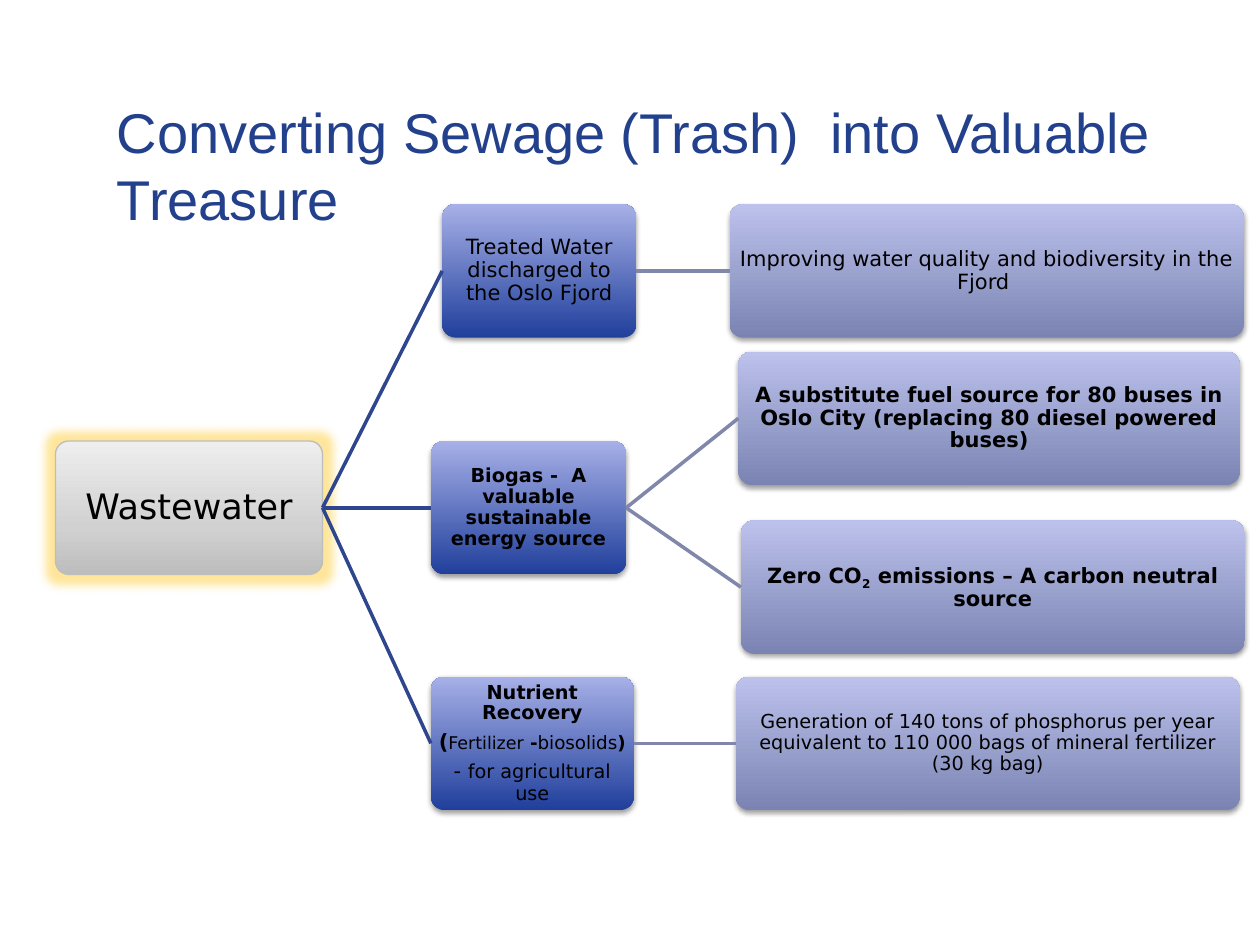
import pptx
import pptx.dml.color
import pptx.enum.shapes
import pptx.enum.text
import pptx.oxml
import pptx.oxml.ns
import pptx.util

ALIGN = pptx.enum.text.PP_ALIGN
ANCHOR = pptx.enum.text.MSO_ANCHOR
SOURCE = [(0, "BDBDBD"), (35, "D1D1D1"), (100, "EEEEEE")]
PRODUCT = [(0, "203F9C"), (100, "A7B0E7")]
BENEFIT = [(0, "7A83B2"), (100, "BCC2EC")]
SHADOW = ('<a:outerShdw blurRad="39370" dist="20320" dir="5400000" rotWithShape="0">'
          '<a:srgbClr val="000000"><a:alpha val="38000"/></a:srgbClr></a:outerShdw>')
GLOW = '<a:glow rad="139700"><a:srgbClr val="FFC000"><a:alpha val="40000"/></a:srgbClr></a:glow>'


def color(value):
    return pptx.dml.color.RGBColor.from_string(value)


def xml(tag, body="", attrs=""):
    ns = pptx.oxml.ns.nsdecls("a")
    return pptx.oxml.parse_xml(f"<a:{tag} {ns} {attrs}>{body}</a:{tag}>")


class Deck:
    columns, rows = 100, 75
    title_font, body_font = "Arial", "DejaVu Sans"
    box_height = 10.6

    def __init__(self):
        self.prs = pptx.Presentation()
        self.prs.slide_width = pptx.util.Inches(10)
        self.prs.slide_height = pptx.util.Inches(7.5)
        self.slide = self.prs.slides.add_slide(self.prs.slide_layouts[6])

    def place(self, x, y, w, h):
        col = self.prs.slide_width / self.columns
        row = self.prs.slide_height / self.rows
        return [round(v) for v in (x * col, y * row, w * col, h * row)]

    def style(self, r, font, size, fill, bold=False, baseline=0):
        r.font.name, r.font.size, r.font.bold = font, pptx.util.Pt(size), bold
        r.font.color.rgb = color(fill)
        if baseline:
            r._r.get_or_add_rPr().set("baseline", str(baseline * 1000))

    def title(self, text, x, y, w, h):
        tf = self.slide.shapes.add_textbox(*self.place(x, y, w, h)).text_frame
        tf.word_wrap = True
        tf.vertical_anchor = ANCHOR.MIDDLE
        tf.text = text
        self.style(tf.paragraphs[0].runs[0], self.title_font, 32, "22408C")

    def box(self, x, y, w, stops, paragraphs, effect=SHADOW, line=None):
        s = self.slide.shapes.add_shape(pptx.enum.shapes.MSO_SHAPE.ROUNDED_RECTANGLE,
                                        *self.place(x, y, w, self.box_height))
        s.adjustments[0] = 0.1
        s.fill.gradient()
        s.fill.gradient_angle = 90
        spPr = s._element.spPr
        gs_list = spPr.find(".//" + pptx.oxml.ns.qn("a:gsLst"))
        gs_list[:] = [xml("gs", f'<a:srgbClr val="{value}"/>', f'pos="{pos * 1000}"')
                      for pos, value in stops]
        if line:
            s.line.color.rgb = color(line)
            s.line.width = pptx.util.Pt(0.75)
        else:
            s.line.fill.background()
        spPr.append(xml("effectLst", effect))
        tf = s.text_frame
        tf.word_wrap = True
        tf.vertical_anchor = ANCHOR.MIDDLE
        tf.margin_left = tf.margin_right = pptx.util.Inches(0.01)
        tf.margin_top = tf.margin_bottom = pptx.util.Inches(0.01)
        for i, runs in enumerate(paragraphs):
            p = tf.add_paragraph() if i else tf.paragraphs[0]
            p.alignment = ALIGN.CENTER
            p.line_spacing = 0.9
            p.space_after = pptx.util.Pt(4)
            for text, *look in runs:
                r = p.add_run()
                r.text = text
                self.style(r, self.body_font, look[0], "000000", *look[1:])
        return s

    def link(self, parent, child, value):
        s = self.slide.shapes.add_connector(pptx.enum.shapes.MSO_CONNECTOR.STRAIGHT, 0, 0, 0, 0)
        s.begin_connect(parent, 3)
        s.end_connect(child, 1)
        s.line.color.rgb = color(value)
        s.line.width = pptx.util.Pt(2)
        s._element.spPr.append(xml("effectLst"))


def main():
    deck = Deck()
    deck.title("Converting Sewage (Trash)  into Valuable Treasure", 8.3, 6.8, 90, 12.5)
    wastewater = deck.box(4.4, 35, 21.2, SOURCE, [[("Wastewater", 20)]], GLOW, "BDBDBD")
    branches = [
        ((35.1, 16.2, 15.4), [[("Treated Water discharged to the Oslo Fjord", 12)]], [
            ((57.9, 16.2, 40.8),
             [("Improving water quality and biodiversity in the Fjord ", 12)]),
        ]),
        ((34.2, 35, 15.5), [[("Biogas -  A valuable sustainable energy source", 11, True)]], [
            ((58.6, 27.9, 39.8),
             [("A substitute fuel source for 80 buses in Oslo City "
               "(replacing 80 diesel powered buses)", 12, True)]),
            ((58.8, 41.3, 40),
             [("Zero CO", 12, True), ("2", 12, True, -25),
              (" emissions – A carbon neutral source", 12, True)]),
        ]),
        ((34.2, 53.7, 16.1), [
            [("Nutrient Recovery", 11, True)],
            [("(", 12, True), ("Fertilizer", 10), (" -", 10.5, True),
             ("biosolids", 10.5), (") ", 10.5, True)],
            [("- ", 12), ("for agricultural use", 11)],
        ], [
            ((58.4, 53.7, 40),
             [("Generation of 140 tons of phosphorus per year equivalent to "
               "110 000 bags of mineral fertilizer (30 kg bag)", 11)]),
        ]),
    ]
    for spot, paragraphs, benefits in branches:
        product = deck.box(*spot, PRODUCT, paragraphs)
        deck.link(wastewater, product, "2E468E")
        for benefit_spot, runs in benefits:
            benefit = deck.box(*benefit_spot, BENEFIT, [runs])
            deck.link(product, benefit, "8187AB")
    deck.prs.save("out.pptx")


if __name__ == "__main__":
    main()
